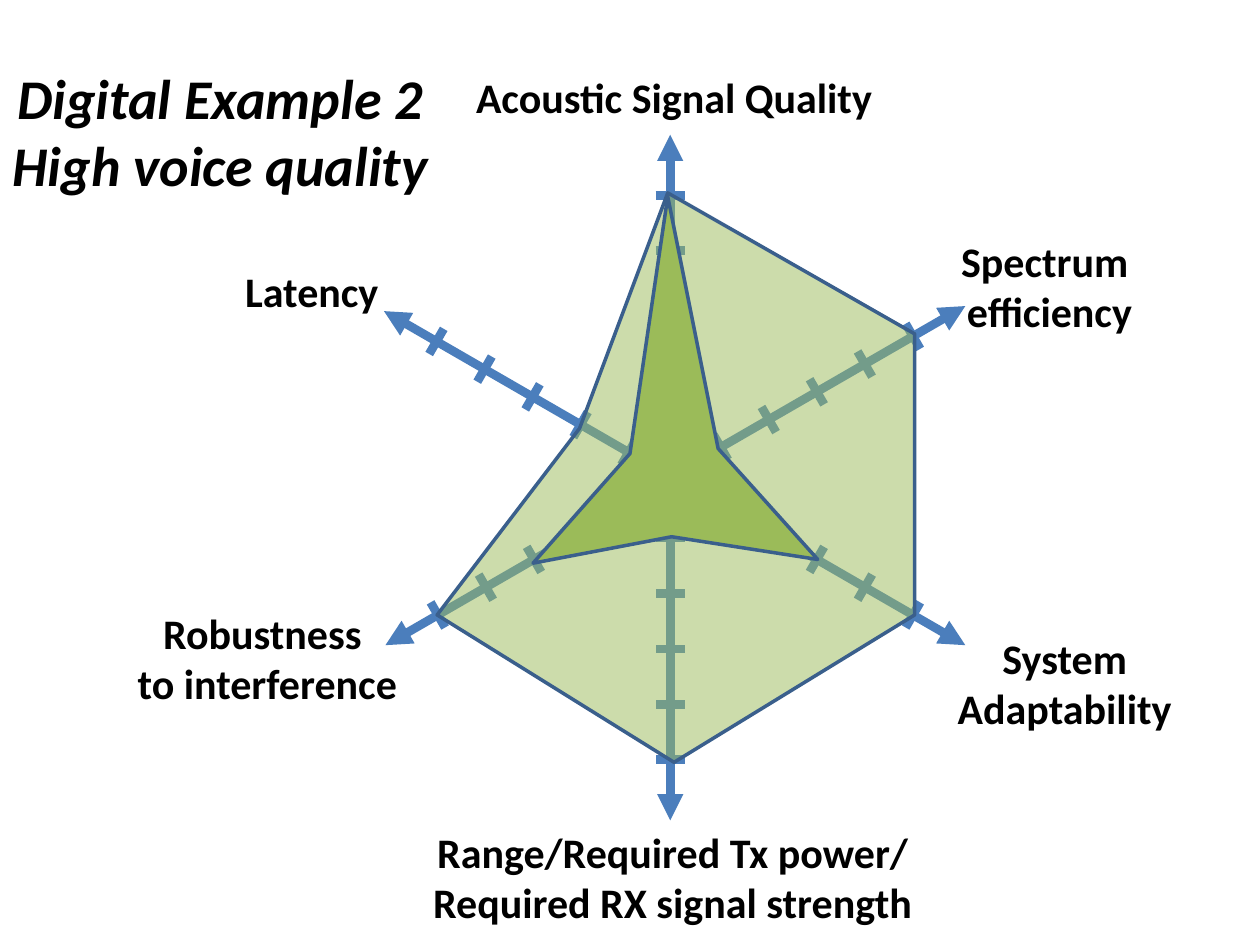
from dataclasses import dataclass
from math import cos, radians, sin

from lxml.etree import SubElement
from pptx import Presentation
from pptx.dml.color import RGBColor
from pptx.enum.shapes import MSO_CONNECTOR
from pptx.enum.text import MSO_ANCHOR, MSO_AUTO_SIZE, PP_ALIGN
from pptx.oxml.ns import qn
from pptx.util import Pt


@dataclass(frozen=True)
class Theme:
    font: str = "Calibri"
    text: RGBColor = RGBColor(0x00, 0x00, 0x00)
    axis: RGBColor = RGBColor(0x4B, 0x7E, 0xBC)
    area: RGBColor = RGBColor(0x9B, 0xBB, 0x59)
    outline: RGBColor = RGBColor(0x3A, 0x5F, 0x8C)
    title_size: int = 32
    label_size: int = 24
    axis_width: int = 5
    outline_width: int = 2


THEME = Theme()

AXIS_LENGTH = 193
TICK_COUNT = 5
OUTER_TICK = 158.4
TICK_GAP = 31.7
TICK_HALF = 8.3

# Angle in degrees, then the inner end of each axis
AXES = [
    (90, 383, 270),
    (150, 386.6, 274.3),
    (270, 383, 275.8),
    (210, 387.4, 272.2),
    (330, 384.5, 272.2),
    (30, 384.5, 271.4),
]

# Text, then left, top, width, height
LABELS = [
    ("Acoustic Signal Quality", 263.5, 37.4, 243.4, 36.7),
    ("Latency", 132.5, 148.3, 91.4, 36.7),
    ("Robustness \nto interference", 70.6, 343.4, 164.2, 65.5),
    ("Range/Required Tx power/\nRequired RX signal strength", 239, 468.7, 290.9, 65.5),
    ("Spectrum \nefficiency", 541.4, 131, 116.6, 65.5),
    ("System\nAdaptability", 539.3, 357.8, 138.2, 65.5),
]

OUTER_AREA = [(381.6, 110.2), (331.2, 244.8), (249.8, 351.4),
              (385.2, 435.6), (522.7, 351.4), (522.7, 190.8)]
INNER_AREA = [(381.6, 112.3), (360, 259.2), (304.6, 321.8),
              (383.8, 306.7), (467.3, 319.7), (410.4, 256.3)]


def add_line(shapes, x1, y1, x2, y2, arrow=False):
    line = shapes.add_connector(MSO_CONNECTOR.STRAIGHT, Pt(x1), Pt(y1), Pt(x2), Pt(y2))
    line.line.color.rgb = THEME.axis
    line.line.width = Pt(THEME.axis_width)
    if arrow:
        SubElement(line.line._get_or_add_ln(), qn("a:tailEnd"), type="triangle")
    SubElement(line._element.spPr, qn("a:effectLst"))


def add_axis(shapes, angle, x, y):
    """Draw an arrow outward from (x, y) with evenly spaced cross ticks."""
    dx, dy = cos(radians(angle)), -sin(radians(angle))
    add_line(shapes, x, y, x + AXIS_LENGTH * dx, y + AXIS_LENGTH * dy, arrow=True)
    for i in range(TICK_COUNT):
        distance = OUTER_TICK - i * TICK_GAP
        cx, cy = x + distance * dx, y + distance * dy
        add_line(shapes, cx + TICK_HALF * dy, cy - TICK_HALF * dx,
                 cx - TICK_HALF * dy, cy + TICK_HALF * dx)


def add_area(shapes, points, opacity=100):
    (x, y), *rest = [(Pt(px), Pt(py)) for px, py in points]
    builder = shapes.build_freeform(x, y)
    builder.add_line_segments(rest, close=True)
    sp = builder.convert_to_shape()
    sp.shadow.inherit = False
    sp.fill.solid()
    sp.fill.fore_color.rgb = THEME.area
    if opacity < 100:
        color = sp._element.spPr.find(qn("a:solidFill"))[0]
        SubElement(color, qn("a:alpha"), val=str(opacity * 1000))
    sp.line.color.rgb = THEME.outline
    sp.line.width = Pt(THEME.outline_width)


def format_text(tf, size, italic=False):
    tf.word_wrap = False
    for p in tf.paragraphs:
        p.alignment = PP_ALIGN.CENTER
        for r in p.runs:
            r.font.name = THEME.font
            r.font.size = Pt(size)
            r.font.bold = True
            r.font.italic = italic
            r.font.color.rgb = THEME.text


def add_label(shapes, text, left, top, width, height):
    tf = shapes.add_textbox(Pt(left), Pt(top), Pt(width), Pt(height)).text_frame
    tf.paragraphs[0].text = text
    format_text(tf, THEME.label_size)
    tf.auto_size = MSO_AUTO_SIZE.SHAPE_TO_FIT_TEXT


def set_title(title, text):
    title.left, title.top, title.width, title.height = Pt(-2.2), Pt(32.4), Pt(256.3), Pt(85)
    tf = title.text_frame
    tf.text = text
    format_text(tf, THEME.title_size, italic=True)
    tf.vertical_anchor = MSO_ANCHOR.TOP
    tf.auto_size = MSO_AUTO_SIZE.SHAPE_TO_FIT_TEXT
    for p in tf.paragraphs:
        p.space_before = Pt(0)


def main():
    prs = Presentation()
    prs.slide_width, prs.slide_height = Pt(720), Pt(540)
    s = prs.slides.add_slide(prs.slide_layouts[5])
    set_title(s.shapes.title, "Digital Example 2\nHigh voice quality")

    axes = s.shapes.add_group_shape()
    for axis in AXES:
        add_axis(axes.shapes, *axis)
    for label in LABELS:
        add_label(s.shapes, *label)
    add_area(s.shapes, OUTER_AREA, opacity=50)
    add_area(s.shapes, INNER_AREA)
    prs.save("out.pptx")


if __name__ == "__main__":
    main()
